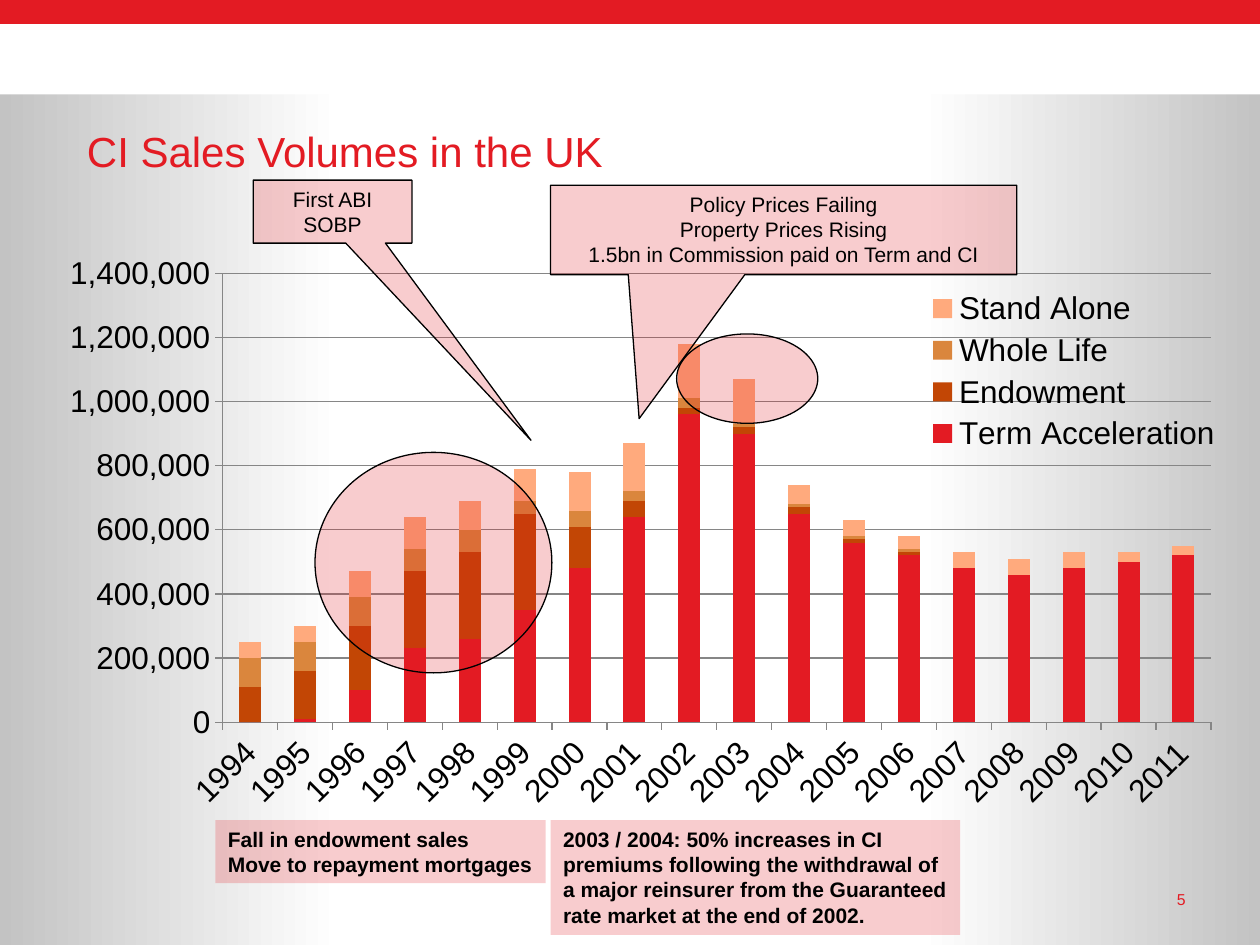
from pptx import Presentation
from pptx.chart.data import CategoryChartData
from pptx.dml.color import RGBColor
from pptx.enum.chart import XL_CHART_TYPE as CT, XL_LEGEND_POSITION as LP, XL_TICK_MARK as TM
from pptx.enum.shapes import MSO_SHAPE as SHAPE
from pptx.enum.text import MSO_ANCHOR as ANCHOR, MSO_AUTO_SIZE as FIT, PP_ALIGN as ALIGN
from pptx.oxml import parse_xml
from pptx.oxml.ns import nsdecls, qn
from pptx.util import Inches, Pt

RED, BLACK, GREY, WHITE = "E31B23", "000000", "868686", "FFFFFF"
FONT = "Arial"

# Sales in thousands of policies, 1994 to 2011
SERIES = [
    ("Term Acceleration", RED, [0, 10, 100, 230, 260, 350, 480, 640, 960, 900,
                                650, 560, 520, 480, 460, 480, 500, 520]),
    ("Endowment", "C24605", [110, 150, 200, 240, 270, 300, 130, 50, 20, 20,
                             20, 10, 10, 0, 0, 0, 0, 0]),
    ("Whole Life", "DA863D", [90, 90, 90, 70, 70, 40, 50, 30, 30, 10,
                              10, 10, 10, 0, 0, 0, 0, 0]),
    ("Stand Alone", "FFAA7D", [50, 50, 80, 100, 90, 100, 120, 150, 170, 140,
                               60, 50, 40, 50, 50, 50, 30, 30]),
]


def rgb(color):
    return RGBColor.from_string(color)


def set_font(font, size, color=BLACK, bold=False):
    font.name, font.size, font.bold = FONT, Pt(size), bold
    font.color.rgb = rgb(color)


def write(sp, text, size, color=BLACK, bold=False, align=ALIGN.LEFT, anchor=ANCHOR.TOP):
    tf = sp.text_frame
    tf.text = text
    tf.word_wrap = True
    tf.vertical_anchor = anchor
    for p in tf.paragraphs:
        p.alignment = align
        for r in p.runs:
            set_font(r.font, size, color, bold)


def add_shape(s, kind, box, color, alpha=None, outlined=False):
    sp = s.shapes.add_shape(kind, *map(Inches, box))
    sp.shadow.inherit = False
    sp.fill.solid()
    sp.fill.fore_color.rgb = rgb(color)
    if alpha is not None:
        clr = sp.fill._xPr.find(qn("a:solidFill"))[0]
        clr.append(parse_xml(f'<a:alpha {nsdecls("a")} val="{alpha * 1000}"/>'))
    if outlined:
        sp.line.color.rgb = rgb(BLACK)
        sp.line.width = Pt(0.75)
    else:
        sp.line.fill.background()
    return sp


def add_highlight(s, box):
    add_shape(s, SHAPE.OVAL, box, RED, 22, True)


def add_note(s, box, text):
    sp = add_shape(s, SHAPE.RECTANGLE, box, RED, 22)
    write(sp, text, 12, bold=True)
    sp.text_frame.auto_size = FIT.SHAPE_TO_FIT_TEXT


def add_callout(s, box, tip, text):
    sp = add_shape(s, SHAPE.RECTANGULAR_CALLOUT, box, RED, 22, True)
    sp.adjustments[0], sp.adjustments[1] = tip
    write(sp, text, 12, align=ALIGN.CENTER)
    sp.text_frame.auto_size = FIT.SHAPE_TO_FIT_TEXT


def set_background(s):
    fill = s.background.fill
    fill.gradient()
    fill.gradient_angle = 0
    stops = s.element.find(".//" + qn("a:gsLst"))
    for stop in list(stops):
        stops.remove(stop)
    for pos, color in [(0, "C3C3C3"), (27, WHITE), (73, WHITE), (100, "C3C3C3")]:
        stops.append(parse_xml(f'<a:gs {nsdecls("a")} pos="{pos * 1000}">'
                               f'<a:srgbClr val="{color}"/></a:gs>'))


def layout_xml(x, y, w, h, inner=False):
    target = '<c:layoutTarget val="inner"/>' if inner else ""
    return parse_xml(
        f'<c:layout {nsdecls("c")}><c:manualLayout>{target}'
        '<c:xMode val="edge"/><c:yMode val="edge"/>'
        f'<c:x val="{x}"/><c:y val="{y}"/><c:w val="{w}"/><c:h val="{h}"/>'
        '</c:manualLayout></c:layout>')


def add_sales_chart(s, box):
    data = CategoryChartData(number_format="#,##0")
    data.categories = [str(year) for year in range(1994, 2012)]
    for name, _, thousands in SERIES:
        data.add_series(name, [v * 1000 for v in thousands])
    chart = s.shapes.add_chart(CT.COLUMN_STACKED, *map(Inches, box), data).chart
    set_font(chart.font, 18)
    chart.has_title = False

    plot = chart.plots[0]
    plot.gap_width, plot.overlap = 150, 100
    plot.vary_by_categories = False
    for series, (_, color, _) in zip(plot.series, SERIES):
        series.format.fill.solid()
        series.format.fill.fore_color.rgb = rgb(color)

    # Axes
    cat, val = chart.category_axis, chart.value_axis
    for axis in (cat, val):
        axis.format.line.color.rgb = rgb(GREY)
        axis.major_tick_mark = TM.OUTSIDE
    cat.tick_labels.offset = 100
    cat.format.line.width = Pt(0.75)
    cat._element.find(qn("c:txPr")) is None and set_font(cat.tick_labels.font, 18)
    cat._element.find(qn("c:txPr")).find(qn("a:bodyPr")).set("rot", "-2700000")
    val.minimum_scale, val.maximum_scale, val.major_unit = 0, 1400000, 200000
    val.tick_labels.number_format = "#,##0"
    val.tick_labels.number_format_is_linked = False
    val.has_major_gridlines = True
    val.major_gridlines.format.line.color.rgb = rgb(GREY)

    # Legend laid over the plot
    chart.has_legend = True
    legend = chart.legend
    legend.position = LP.RIGHT
    legend.include_in_layout = True
    set_font(legend.font, 18)
    legend._element.find(qn("c:legendPos")).addnext(layout_xml(0.74, 0.07, 0.25, 0.3))

    area = chart._chartSpace.find(".//" + qn("c:plotArea"))
    for old in area.findall(qn("c:layout")):
        area.remove(old)
    area.insert(0, layout_xml(0.15, 0.05, 0.83, 0.78, inner=True))


def main():
    prs = Presentation()
    prs.slide_width, prs.slide_height = Inches(10), Inches(7.5)
    s = prs.slides.add_slide(prs.slide_layouts[5])
    set_background(s)

    # Header bands and title
    add_shape(s, SHAPE.RECTANGLE, (0, 0, 10, 0.75), WHITE)
    add_shape(s, SHAPE.RECTANGLE, (0, 0, 10, 0.19), RED)
    title = s.shapes.title
    title.left, title.top, title.width, title.height = map(Inches, (0.59, 0.92, 8.82, 0.55))
    write(title, "CI Sales Volumes in the UK", 24, RED, anchor=ANCHOR.MIDDLE)

    add_sales_chart(s, (0.35, 1.94, 9.45, 4.57))

    # Comments on the chart
    add_note(s, (4.37, 6.51, 3.25, 0.91),
             "2003 / 2004: 50% increases in CI premiums following the withdrawal of "
             "a major reinsurer from the Guaranteed rate market at the end of 2002.")
    add_note(s, (1.71, 6.51, 2.62, 0.5),
             "Fall in endowment sales\nMove to repayment mortgages")
    add_highlight(s, (5.37, 2.65, 1.12, 0.71))
    add_highlight(s, (2.5, 3.59, 1.88, 1.75))
    add_callout(s, (4.37, 1.47, 3.7, 0.71), (-0.31, 2.11),
                "Policy Prices Failing\nProperty Prices Rising\n"
                "1.5bn in Commission paid on Term and CI")
    add_callout(s, (2.01, 1.43, 1.26, 0.5), (1.25, 3.63), "First ABI SOBP")

    # Slide number
    number = s.shapes.add_textbox(*map(Inches, (8.86, 7.06, 0.55, 0.24)))
    write(number, "5", 9, RED, align=ALIGN.RIGHT)
    tf = number.text_frame
    tf.margin_left = tf.margin_right = tf.margin_top = tf.margin_bottom = 0

    prs.save("out.pptx")


if __name__ == "__main__":
    main()
